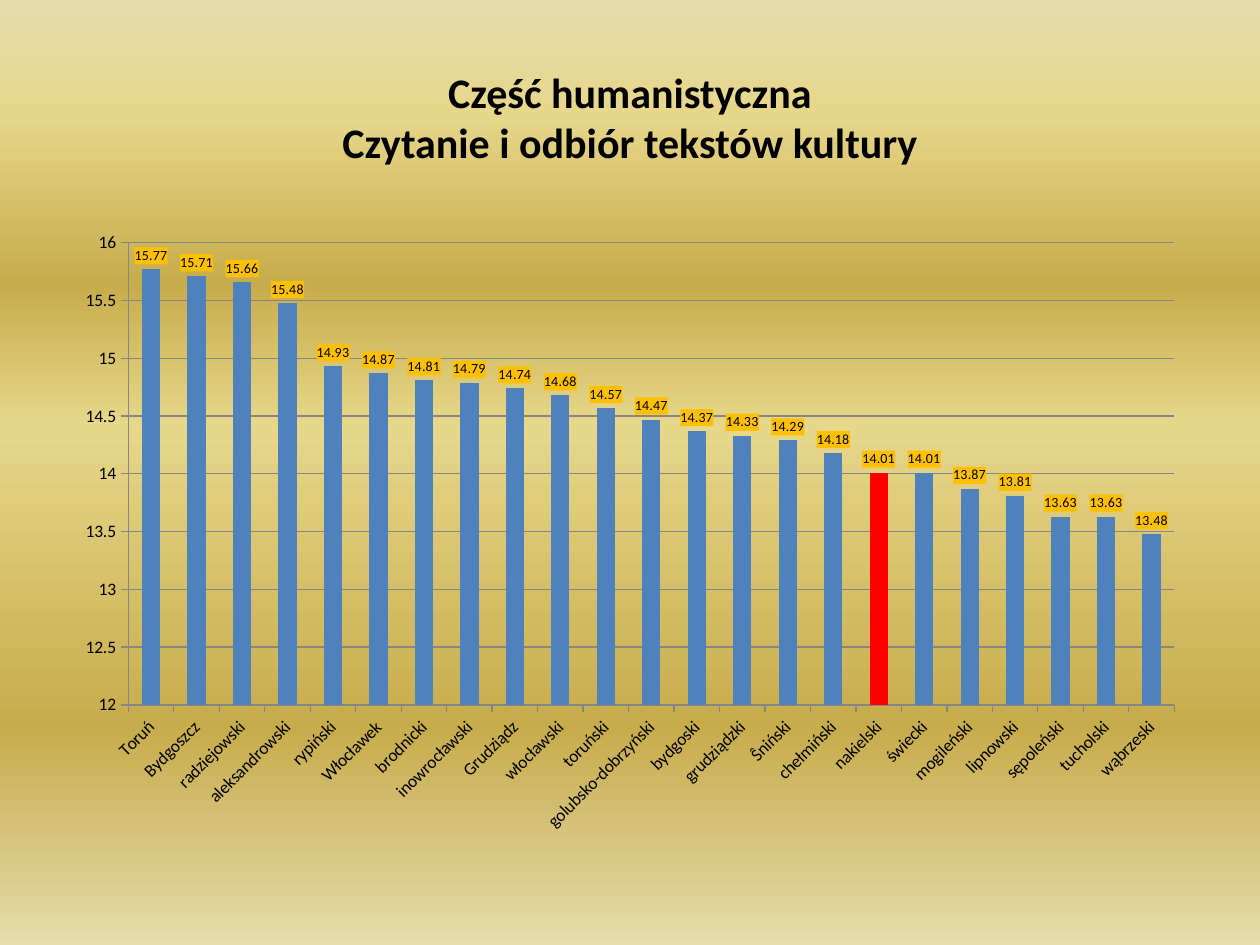
import dataclasses

import lxml.etree
import pptx
import pptx.chart.data
import pptx.dml.color
import pptx.enum.chart
import pptx.enum.text
import pptx.oxml
import pptx.oxml.ns
import pptx.util

Inches = pptx.util.Inches
qn = pptx.oxml.ns.qn

RESULTS = {
    "Toruń": 15.77, "Bydgoszcz": 15.71, "radziejowski": 15.66,
    "aleksandrowski": 15.48, "rypiński": 14.93, "Włocławek": 14.87,
    "brodnicki": 14.81, "inowrocławski": 14.79, "Grudziądz": 14.74,
    "włocławski": 14.68, "toruński": 14.57, "golubsko-dobrzyński": 14.47,
    "bydgoski": 14.37, "grudziądzki": 14.33, "Ŝniński": 14.29,
    "chełmiński": 14.18, "nakielski": 14.01, "świecki": 14.01,
    "mogileński": 13.87, "lipnowski": 13.81, "sępoleński": 13.63,
    "tucholski": 13.63, "wąbrzeski": 13.48,
}


@dataclasses.dataclass(frozen=True)
class Theme:
    font: str = "Calibri"
    text: str = "000000"
    bar: str = "4F81BD"
    highlight: str = "FF0000"
    label_fill: str = "FFC000"
    grid: str = "868686"
    title_size: int = 24
    axis_size: int = 10
    label_size: int = 8
    background: tuple = (
        (0, "E6DCAC"), (12, "E6D78A"), (30, "C7AC4C"),
        (45, "E6D78A"), (77, "C7AC4C"), (100, "E6DCAC"),
    )


def rgb(value):
    return pptx.dml.color.RGBColor.from_string(value)


class SlideBuilder:
    def __init__(self, deck, theme):
        self.theme = theme
        self.page = deck.slides.add_slide(deck.slide_layouts[5])

    def style_font(self, font, size, bold=False):
        font.name = self.theme.font
        font.size = pptx.util.Pt(size)
        font.bold = bold
        font.color.rgb = rgb(self.theme.text)

    def background(self):
        fill = self.page.background.fill
        fill.gradient()
        fill.gradient_angle = 270
        stops = next(self.page.element.iter(qn("a:gsLst")))
        for stop in list(stops):
            stops.remove(stop)
        for percent, color in self.theme.background:
            stop = lxml.etree.SubElement(stops, qn("a:gs"), pos=str(percent * 1000))
            lxml.etree.SubElement(stop, qn("a:srgbClr"), val=color)

    def title(self, text, left, top, width, height):
        box = self.page.shapes.title
        box.left, box.top = Inches(left), Inches(top)
        box.width, box.height = Inches(width), Inches(height)
        frame = box.text_frame
        frame.vertical_anchor = pptx.enum.text.MSO_ANCHOR.MIDDLE
        para = frame.paragraphs[0]
        para.text = text
        para.alignment = pptx.enum.text.PP_ALIGN.CENTER
        self.style_font(para.font, self.theme.title_size, bold=True)

    def column_chart(self, results, highlighted, left, top, width, height):
        data = pptx.chart.data.CategoryChartData()
        data.categories = list(results)
        data.add_series("Series 1", list(results.values()))
        chart = self.page.shapes.add_chart(
            pptx.enum.chart.XL_CHART_TYPE.COLUMN_CLUSTERED,
            Inches(left), Inches(top), Inches(width), Inches(height), data,
        ).chart
        chart.has_legend = False
        chart.has_title = False
        self.style_font(chart.font, self.theme.axis_size)

        plot = chart.plots[0]
        plot.gap_width = 150
        plot.vary_by_categories = False
        series = plot.series[0]
        point = series.points[list(results).index(highlighted)]
        for item, color in ((series, self.theme.bar), (point, self.theme.highlight)):
            item.format.fill.solid()
            item.format.fill.fore_color.rgb = rgb(color)

        self.axes(chart)
        self.value_labels(series.data_labels)

    def axes(self, chart):
        values, names = chart.value_axis, chart.category_axis
        values.minimum_scale, values.maximum_scale = 12, 16
        values.major_unit = 0.5
        values.has_major_gridlines = True
        values.tick_labels.number_format = "General"
        values.tick_labels.number_format_is_linked = False
        for axis in (values, names):
            axis.major_tick_mark = pptx.enum.chart.XL_TICK_MARK.OUTSIDE
            self.style_font(axis.tick_labels.font, self.theme.axis_size)
        for item in (values, names, values.major_gridlines):
            item.format.line.color.rgb = rgb(self.theme.grid)
            item.format.line.width = pptx.util.Pt(0.75)
        body = next(names.format.line and chart.element.iter(qn("c:catAx"))).find(
            f"{qn('c:txPr')}/{qn('a:bodyPr')}"
        )
        body.set("rot", str(-45 * 60000))
        body.set("vert", "horz")

    def value_labels(self, labels):
        labels.show_value = True
        labels.number_format = "0.00"
        labels.number_format_is_linked = False
        labels.position = pptx.enum.chart.XL_LABEL_POSITION.OUTSIDE_END
        self.style_font(labels.font, self.theme.label_size)
        properties = pptx.oxml.parse_xml(
            f"<c:spPr {pptx.oxml.ns.nsdecls('c', 'a')}><a:solidFill>"
            f'<a:srgbClr val="{self.theme.label_fill}"/></a:solidFill></c:spPr>'
        )
        labels._element.find(qn("c:txPr")).addprevious(properties)


def main():
    deck = pptx.Presentation()
    deck.slide_width, deck.slide_height = Inches(10), Inches(7.5)
    slide = SlideBuilder(deck, Theme())
    slide.background()
    slide.title(
        "Część humanistyczna\vCzytanie i odbiór tekstów kultury", 0.5, 0.3, 9, 1.25
    )
    slide.column_chart(RESULTS, "nakielski", 0.5, 1.75, 9, 4.95)
    deck.save("out.pptx")


if __name__ == "__main__":
    main()
